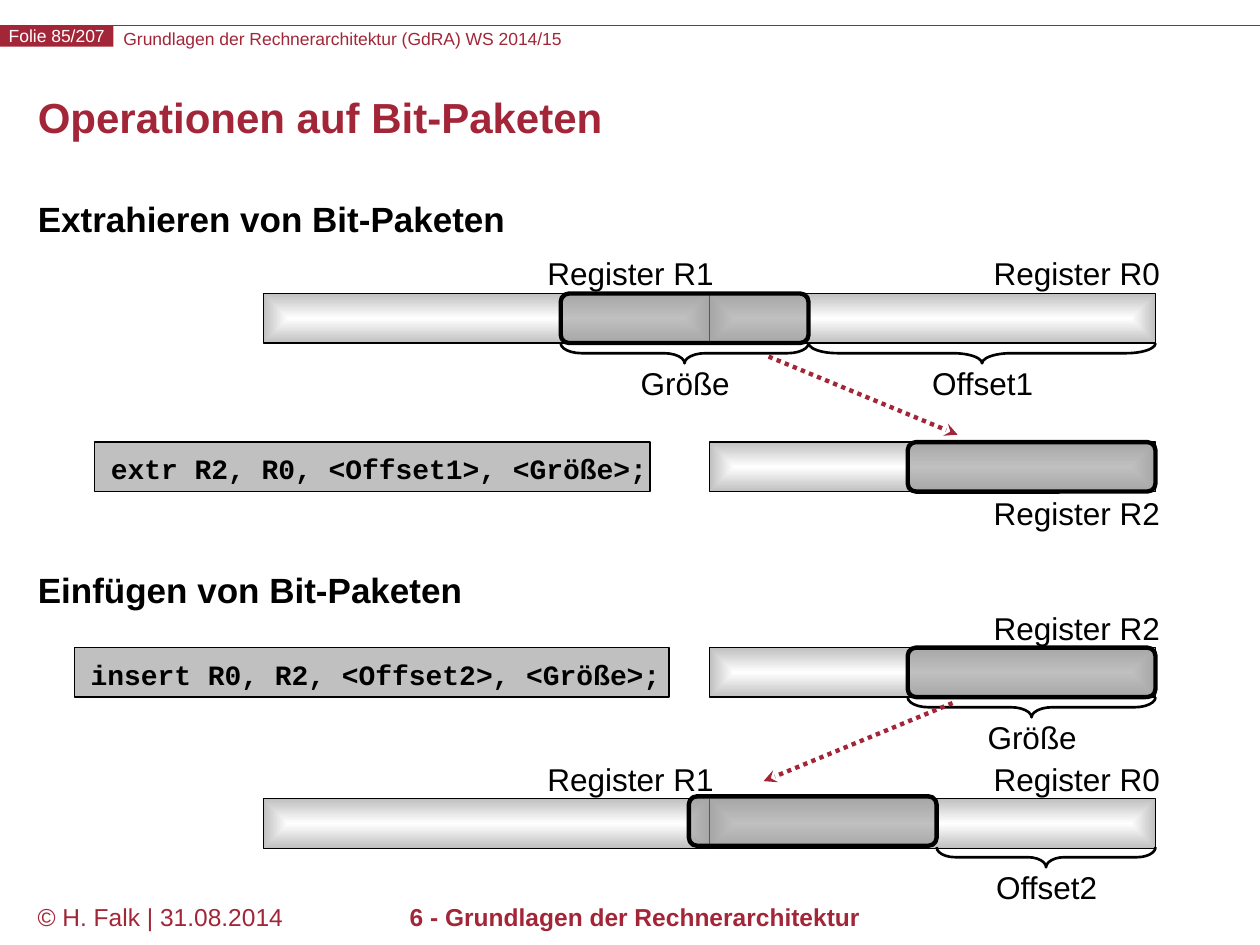
from lxml.etree import SubElement
from pptx import Presentation
from pptx.dml.color import RGBColor
from pptx.enum.dml import MSO_LINE
from pptx.enum.shapes import MSO_CONNECTOR, MSO_SHAPE
from pptx.enum.text import MSO_ANCHOR, MSO_AUTO_SIZE, PP_ALIGN
from pptx.oxml.ns import qn
from pptx.util import Inches, Pt

RED, BLACK, GREY, WHITE = "A32638", "000000", "C0C0C0", "FFFFFF"
COL, ROW = 0.1967, 0.393
REG, PACKET = 18, 10


def rgb(value):
    """Turn a hex string into a colour."""
    return RGBColor.from_string(value)


def write(tf, text, size=18, color=BLACK, font="Arial", bold=False,
          align=PP_ALIGN.LEFT, anchor=MSO_ANCHOR.TOP, margins=(0, 0, 0, 0),
          wrap=False, hang=None, more=False, before=0, line=None):
    """Write one formatted paragraph, appended to the frame if more is set."""
    tf.auto_size, tf.word_wrap, tf.vertical_anchor = MSO_AUTO_SIZE.NONE, wrap, anchor
    tf.margin_left, tf.margin_top, tf.margin_right, tf.margin_bottom = map(Inches, margins)
    p = tf.add_paragraph() if more else tf.paragraphs[0]
    p.alignment, p.space_before = align, Pt(before)
    if line:
        p.line_spacing = Pt(line)
    pPr = p._p.get_or_add_pPr()
    left, first = hang or (0, 0)
    pPr.set("marL", str(Inches(left)))
    pPr.set("indent", str(Inches(first)))
    SubElement(pPr, qn("a:buNone"))
    r = p.add_run()
    r.text = text
    r.font.size, r.font.name, r.font.bold = Pt(size), font, bold
    r.font.color.rgb = rgb(color)


def text_box(s, x, y, w, h, text, **fmt):
    """Add a text box with one formatted paragraph."""
    write(s.shapes.add_textbox(*map(Inches, (x, y, w, h))).text_frame, text, **fmt)


def shape(s, kind, x, y, w, h, fill=None, line=None, width=0.75):
    """Add a preset shape without shadow."""
    sp = s.shapes.add_shape(kind, *map(Inches, (x, y, w, h)))
    sp.shadow.inherit = False
    if fill:
        sp.fill.solid()
        sp.fill.fore_color.rgb = rgb(fill)
    else:
        sp.fill.background()
    if line:
        sp.line.color.rgb = rgb(line)
        sp.line.width = Pt(width)
    else:
        sp.line.fill.background()
    return sp


def connector(s, x1, y1, x2, y2, width, arrow=False):
    """Add a red line, or a dotted arrow."""
    c = s.shapes.add_connector(MSO_CONNECTOR.STRAIGHT, *map(Inches, (x1, y1, x2, y2)))
    c.line.color.rgb, c.line.width = rgb(RED), Pt(width)
    if arrow:
        c.line.dash_style = MSO_LINE.ROUND_DOT
        SubElement(c.line._get_or_add_ln(), qn("a:tailEnd"), type="stealth")
    SubElement(c._element.spPr, qn("a:effectLst"))


def label(s, center, y, w, text):
    """Add a hanging label whose text is centred on the given point."""
    text_box(s, center - w / 2 - 0.1, y, w, 0.3, text,
             align=PP_ALIGN.CENTER, hang=(0.71, -0.5))


def register(s, x, y, name, below=False):
    """Draw a shaded register with its name at the right end."""
    w = REG * COL
    sp = shape(s, MSO_SHAPE.RECTANGLE, x, y, w, ROW, GREY, BLACK)
    sp.fill.gradient()
    for stop, color in zip(sp.fill.gradient_stops, (WHITE, GREY)):
        stop.color.rgb = rgb(color)
    grad = sp._element.spPr.find(qn("a:gradFill"))
    grad.remove(grad.find(qn("a:lin")))
    shade = SubElement(grad, qn("a:path"), path="shape")
    SubElement(shade, qn("a:fillToRect"), l="50000", t="50000", r="50000", b="50000")
    label(s, x + w - 0.63, y + (0.41 if below else -0.31), 1.53, name)


def packet(s, x, y):
    """Draw the translucent bit packet over a register."""
    sp = shape(s, MSO_SHAPE.ROUNDED_RECTANGLE, x, y, PACKET * COL, ROW,
               "969696", BLACK, 2.5)
    color = sp._element.spPr.find(qn("a:solidFill")).find(qn("a:srgbClr"))
    SubElement(color, qn("a:alpha"), val="60000")


def brace(s, x, y, cols, text):
    """Draw a brace below a register and name its span."""
    w, h, top = cols * COL, 0.16, y + ROW
    sp = shape(s, MSO_SHAPE.LEFT_BRACE, x + (w - h) / 2, top + (h - w) / 2, h, w,
               line=BLACK, width=1.5)
    sp.rotation = 270
    sp.adjustments[0] = 0.527 * w
    label(s, x + w / 2, y + 0.56, 1, text)


def code(s, x, y, w, text):
    """Draw an instruction on a grey panel."""
    sp = shape(s, MSO_SHAPE.RECTANGLE, x, y, w, ROW, GREY, BLACK)
    write(sp.text_frame, text, size=16, font="Courier New", bold=True,
          anchor=MSO_ANCHOR.MIDDLE, margins=(0.13, 0.03, 0, 0))


def extract(s, x, y):
    """Draw the extraction, with its register pair starting at x, y."""
    right, low = x + REG * COL, y + 3 * ROW
    start, target = x + 12 * COL, x + 26 * COL
    register(s, right, low, "Register R2", below=True)
    code(s, x - 1.34, low, 4.41, "extr R2, R0, <Offset1>, <Größe>;")
    register(s, right, y, "Register R0")
    register(s, x, y, "Register R1")
    packet(s, start, y)
    brace(s, start + PACKET * COL, y, 14, "Offset1")
    brace(s, start, y, PACKET, "Größe")
    packet(s, target, low)
    connector(s, x + 4.01, y + 0.5, x + 5.51, y + 1.12, 2.5, arrow=True)


def insert(s, x, y):
    """Draw the insertion, with its source register's row starting at x, y."""
    right, low = x + REG * COL, y + 1.2
    source, target = x + 26 * COL, x + 17.17 * COL
    register(s, right, low, "Register R0")
    register(s, right, y, "Register R2")
    code(s, x - 1.5, y, 4.72, "insert R0, R2, <Offset2>, <Größe>;")
    register(s, x, low, "Register R1")
    packet(s, target, low - 0.02)
    brace(s, target + PACKET * COL, low - 0.01, 8.83, "Offset2")
    brace(s, source, y, PACKET, "Größe")
    packet(s, source, y)
    connector(s, x + 5.47, y + 0.44, x + 3.97, y + 1.06, 2.5, arrow=True)


def frame(s, w, h):
    """Draw the header strip and the footer."""
    top, foot, pad = 0.2, h - 0.39, (0.1, 0.05, 0.1, 0.05)
    connector(s, 0, top, w, top, 0.75)
    text_box(s, 0.98, 0.22, 6.6, 0.17, size=10, color=RED, wrap=True,
             text="Grundlagen der Rechnerarchitektur (GdRA) WS 2014/15")
    sp = shape(s, MSO_SHAPE.RECTANGLE, 0, top, 0.9, 0.17, RED)
    write(sp.text_frame, "Folie 85/207", size=10, color=WHITE,
          align=PP_ALIGN.CENTER, anchor=MSO_ANCHOR.MIDDLE)
    text_box(s, 0.2, foot, 2.2, 0.39, "© H. Falk | 31.08.2014", size=14,
             color=RED, margins=pad, wrap=True)
    text_box(s, 2.01, foot, 6.06, 0.39, "6 - Grundlagen der Rechnerarchitektur",
             size=14, color=RED, bold=True, align=PP_ALIGN.CENTER,
             margins=pad, wrap=True)


def headings(s, x, y, w):
    """Fill the title and body placeholders."""
    title, body = s.shapes.title, s.placeholders[1]
    for ph, top, h in ((title, y, 0.72), (body, y + 0.92, 5.46)):
        ph.left, ph.top, ph.width, ph.height = map(Inches, (x, top, w, h))
    fmt = dict(bold=True, margins=(0.1, 0.05, 0.1, 0.05), wrap=True)
    write(title.text_frame, "Operationen auf Bit-Paketen", size=24, color=RED,
          anchor=MSO_ANCHOR.MIDDLE, line=24, **fmt)
    fmt.update(size=20, hang=(0.38, -0.38))
    write(body.text_frame, "Extrahieren von Bit-Paketen", **fmt)
    write(body.text_frame, "Einfügen von Bit-Paketen", more=True, before=192,
          line=20, **fmt)


def main():
    """Build and save the slide."""
    prs = Presentation()
    prs.slide_width, prs.slide_height = Inches(10), Inches(7.5)
    s = prs.slides.add_slide(prs.slide_layouts[1])
    frame(s, 10, 7.5)
    headings(s, 0.2, 0.6, 9.61)
    extract(s, 2.09, 2.33)
    insert(s, 2.09, 5.14)
    prs.save("out.pptx")


if __name__ == "__main__":
    main()
